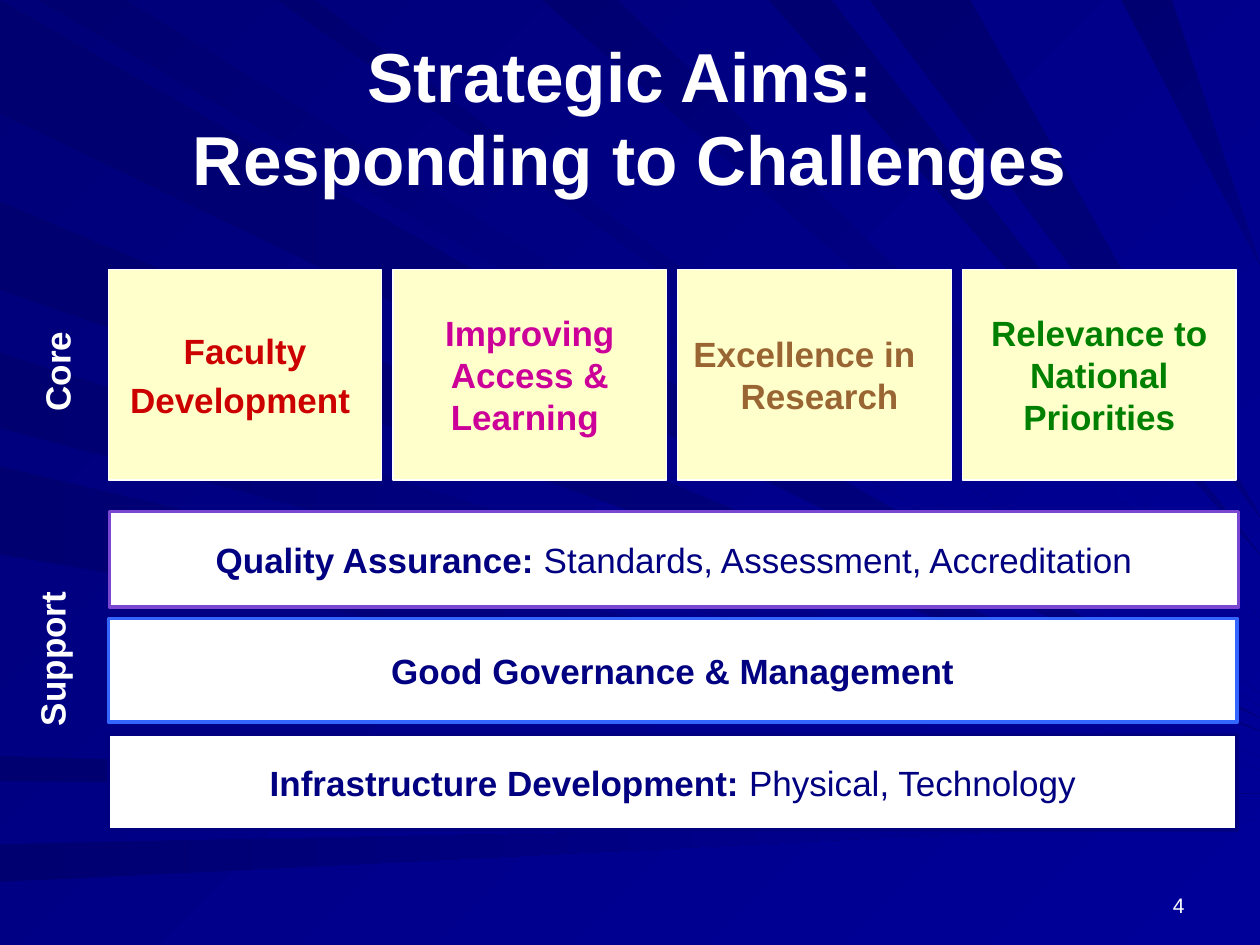
from pptx import Presentation
from pptx import util as u
from pptx.dml.color import RGBColor
from pptx.enum import shapes, text

COLOURS = {
    "white": "FFFFFF", "cream": "FFFFCC", "navy": "000080", "blue": "000099",
    "background": "000078", "shade": "000070", "sky": "3366FF", "violet": "7B46D0",
    "red": "CC0000", "magenta": "CC0099", "brown": "996633", "green": "008000",
}


def paint(fill, start, end, angle=0):
    """Fill with one colour, or with a gradient turned clockwise by angle."""
    if start == end:
        fill.solid()
        fill.fore_color.rgb = RGBColor.from_string(COLOURS[start])
        return
    fill.gradient()
    fill.gradient_angle = (360 - angle) % 360
    for stop, colour in zip(fill.gradient_stops, (start, end)):
        stop.color.rgb = RGBColor.from_string(COLOURS[colour])


def write(box, paragraphs, size, colour, align=text.PP_ALIGN.CENTER, anchor=text.MSO_ANCHOR.MIDDLE):
    """Write paragraphs given as lists of (words, bold)."""
    frame = box.text_frame
    frame.word_wrap = True
    frame.vertical_anchor = anchor
    for index, spans in enumerate(paragraphs):
        para = frame.add_paragraph() if index else frame.paragraphs[0]
        para.text = spans[0][0]
        for words, _ in spans[1:]:
            para.add_run().text = words
        para.alignment = align
        para.font.size = u.Pt(size)
        for span in para.runs:
            span.font.name = "Arial"
            span.font.size = u.Pt(size)
            span.font.bold = dict(spans).get(span.text, spans[0][1])
            span.font.color.rgb = RGBColor.from_string(COLOURS[colour])


deck = Presentation()
deck.slide_width, deck.slide_height = u.Inches(10), u.Inches(7.5)
page = deck.slides.add_slide(deck.slide_layouts[6])
paint(page.background.fill, "background", "blue", 45)

# Each ray starts as a span on the left or top edge and narrows to a tip on the right edge
LEFT_RAYS = [(0, 0.9, 5.7, "navy"), (1.6, 2.3, 5.8, "navy"), (2.8, 3.4, 6, "blue"),
             (3.7, 4.4, 6.1, "blue"), (6, 6.2, 6.3, "navy"), (6.7, 7, 6.5, "blue")]
TOP_RAYS = [(0.3, 1, 5.6, "blue"), (2.2, 2.5, 5.5, "blue"), (4.3, 4.9, 4.9, "blue"),
            (6.1, 6.6, 4.4, "navy"), (6.9, 7.7, 4.1, "navy"), (8.9, 9.3, 2.1, "navy")]
rays = [((0, near), (0, far), tip, end, 0) for near, far, tip, end in LEFT_RAYS]
rays += [((near, 0), (far, 0), tip, end, 45) for near, far, tip, end in TOP_RAYS]
for near, far, tip, end, angle in rays:
    points = [(u.Inches(x), u.Inches(y)) for x, y in (near, far, (10, tip))]
    builder = page.shapes.build_freeform(*points[0])
    builder.add_line_segments(points[1:], close=True)
    ray = builder.convert_to_shape()
    ray.shadow.inherit = False
    ray.line.fill.background()
    paint(ray.fill, "shade", end, angle)

title = page.shapes.add_textbox(u.Inches(0.5), u.Inches(0.3), u.Inches(9), u.Inches(1.25))
write(title, [[("Strategic Aims: \vResponding to Challenges", True)]], 39.6, "white")

number = page.shapes.add_textbox(u.Inches(7.17), u.Inches(6.83), u.Inches(2.33), u.Inches(0.5))
write(number, [[("4", False)]], 12, "white", text.PP_ALIGN.RIGHT, text.MSO_ANCHOR.BOTTOM)

# Core aims: a row of four cards
CARDS = [
    (["Faculty", "Development "], "red"),
    (["Improving Access & Learning "], "magenta"),
    (["Excellence in", "Research"], "brown"),
    (["Relevance to National Priorities"], "green"),
]
blocks = []
for column, (lines, colour) in enumerate(CARDS):
    blocks.append((0.86 + 2.26 * column, 2.14, 2.17, 1.67, "cream", "white", 0.75,
                   [[(line, True)] for line in lines], colour))

# Support aims: three full-width bars
BARS = [
    (0.87, 4.06, 0.76, "violet", [("Quality Assurance: ", True),
                                  ("Standards, Assessment, Accreditation", False)]),
    (0.86, 4.91, 0.82, "sky", [("Good Governance & Management", True)]),
    (0.86, 5.83, 0.76, "navy", [("Infrastructure Development: ", True),
                                ("Physical, Technology", False)]),
]
for left, top, height, border, spans in BARS:
    blocks.append((left, top, 8.96, height, "white", border, 2, [spans], "navy"))

boxes = []
for left, top, width, height, fill, border, weight, paragraphs, colour in blocks:
    box = page.shapes.add_shape(shapes.MSO_SHAPE.RECTANGLE, u.Inches(left), u.Inches(top),
                                u.Inches(width), u.Inches(height))
    box.shadow.inherit = False
    paint(box.fill, fill, fill)
    box.line.color.rgb = RGBColor.from_string(COLOURS[border])
    box.line.width = u.Pt(weight)
    write(box, paragraphs, 20, colour)
    boxes.append(box)

faculty, _, research = boxes[:3]
faculty.text_frame.paragraphs[1].space_before = u.Pt(4)
# The two research lines are staggered around the centre
first, second = research.text_frame.paragraphs
first._p.get_or_add_pPr().set("marR", str(u.Inches(0.16)))
second._p.get_or_add_pPr().set("marL", str(u.Inches(0.24)))

for label, left, top in (("Core", -0.36, 2.71), ("Support", -0.4, 4.99)):
    box = page.shapes.add_textbox(u.Inches(left), u.Inches(top), u.Inches(1.62), u.Inches(0.48))
    box.rotation = 270
    write(box, [[(label, True)]], 20, "white")

deck.save("out.pptx")
